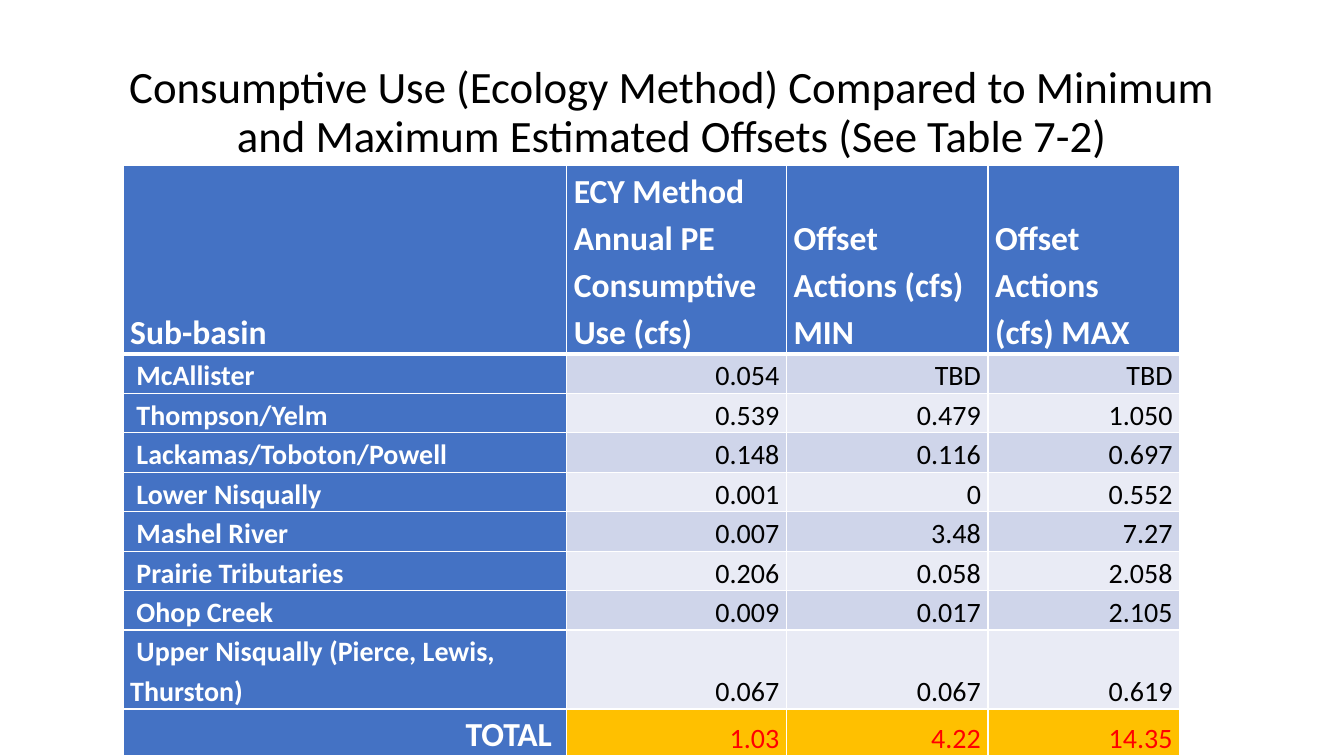
from dataclasses import dataclass

from lxml.etree import SubElement
from pptx import Presentation
from pptx.dml.color import RGBColor
from pptx.enum.text import MSO_ANCHOR as Anchor, PP_ALIGN as Align
from pptx.oxml.ns import qn
from pptx.table import Table, _Cell as Cell
from pptx.text.text import _Paragraph as Para
from pptx.util import Cm, Pt

WHITE, BLACK, RED = "FFFFFF", "000000", "FF0000"
BLUE, GOLD = "4472C4", "FFC000"
BANDS = ("CFD5EA", "E9EBF5")


@dataclass(frozen=True)
class Style:
    fill: str
    ink: str
    size: int
    bold: bool
    align: Align


@dataclass(frozen=True)
class Row:
    texts: tuple[str, ...]
    height: float
    label: Style
    value: Style


HEAD = Style(BLUE, WHITE, 24, True, Align.LEFT)
NAME = Style(BLUE, WHITE, 20, True, Align.LEFT)
TOTAL = Style(BLUE, WHITE, 24, True, Align.RIGHT)
SUM = Style(GOLD, RED, 20, False, Align.RIGHT)
BODY = [Style(band, BLACK, 20, False, Align.RIGHT) for band in BANDS]

BASINS = [
    (" McAllister", "0.054", "TBD", "TBD"),
    (" Thompson/Yelm", "0.539", "0.479", "1.050"),
    (" Lackamas/Toboton/Powell", "0.148", "0.116", "0.697"),
    (" Lower Nisqually", "0.001", "0", "0.552"),
    (" Mashel River", "0.007", "3.48", "7.27"),
    (" Prairie Tributaries", "0.206", "0.058", "2.058"),
    (" Ohop Creek", "0.009", "0.017", "2.105"),
    (" Upper Nisqually (Pierce, Lewis, Thurston)", "0.067", "0.067", "0.619"),
]
HEADS = (
    "Sub-basin",
    "ECY Method Annual PE Consumptive Use (cfs)",
    "Offset Actions (cfs) MIN",
    "Offset Actions  (cfs) MAX",
)
WIDTHS = (11.18, 5.54, 5.08, 4.83)
ROWS = [
    Row(HEADS, 4.52, HEAD, HEAD),
    *(
        Row(texts, 1.85 if texts is BASINS[-1] else 0.89, NAME, BODY[i % 2])
        for i, texts in enumerate(BASINS)
    ),
    Row((" TOTAL ", "1.03", "4.22", "14.35"), 1.09, TOTAL, SUM),
]


def color(code: str) -> RGBColor:
    return RGBColor.from_string(code)


def write(para: Para, text: str, size: int, ink: str, bold: bool) -> None:
    run = para.add_run()
    run.text = text
    run.font.name = "Calibri"
    run.font.size = Pt(size)
    run.font.bold = bold
    run.font.color.rgb = color(ink)


def border(cell: Cell, top: int, bottom: int) -> None:
    props = cell._tc.get_or_add_tcPr()
    for side, width in (("L", 1), ("R", 1), ("T", top), ("B", bottom)):
        line = SubElement(props, qn(f"a:ln{side}"), w=str(Pt(width)))
        fill = SubElement(line, qn("a:solidFill"))
        SubElement(fill, qn("a:srgbClr"), val=WHITE)


def draw_cell(cell: Cell, text: str, style: Style, index: int) -> None:
    border(cell, 3 if index == 1 else 1, 3 if index == 0 else 1)
    cell.fill.solid()
    cell.fill.fore_color.rgb = color(style.fill)
    cell.vertical_anchor = Anchor.BOTTOM
    cell.margin_left = cell.margin_right = Cm(0.18)
    cell.margin_top = cell.margin_bottom = 0
    para = cell.text_frame.paragraphs[0]
    para.alignment = style.align
    para.line_spacing = 1.15
    para.space_after = Pt(10)
    write(para, text, style.size, style.ink, style.bold)


def draw_table(table: Table) -> None:
    for column, width in zip(table.columns, WIDTHS):
        column.width = Cm(width)
    for i, row in enumerate(ROWS):
        table.rows[i].height = Cm(row.height)
        for j, text in enumerate(row.texts):
            draw_cell(table.cell(i, j), text, row.value if j else row.label, i)


def main() -> None:
    deck = Presentation()
    deck.slide_width, deck.slide_height = Cm(33.87), Cm(19.05)
    slide = deck.slides.add_slide(deck.slide_layouts[5])

    title = slide.shapes.title
    title.left, title.top = Cm(2.33), Cm(1.02)
    title.width, title.height = Cm(29.21), Cm(3.68)
    frame = title.text_frame
    frame.word_wrap = True
    frame.vertical_anchor = Anchor.MIDDLE
    para = frame.paragraphs[0]
    para.alignment = Align.CENTER
    para.line_spacing = 0.9
    write(
        para,
        "Consumptive Use (Ecology Method) Compared to Minimum "
        "and Maximum Estimated Offsets (See Table 7-2)",
        32, BLACK, False,
    )

    high = sum(row.height for row in ROWS)
    grid = slide.shapes.add_table(
        len(ROWS), len(WIDTHS), Cm(3.1), Cm(4.17), Cm(sum(WIDTHS)), Cm(high)
    )
    grid.table.first_col = True
    draw_table(grid.table)
    deck.save("out.pptx")


if __name__ == "__main__":
    main()
